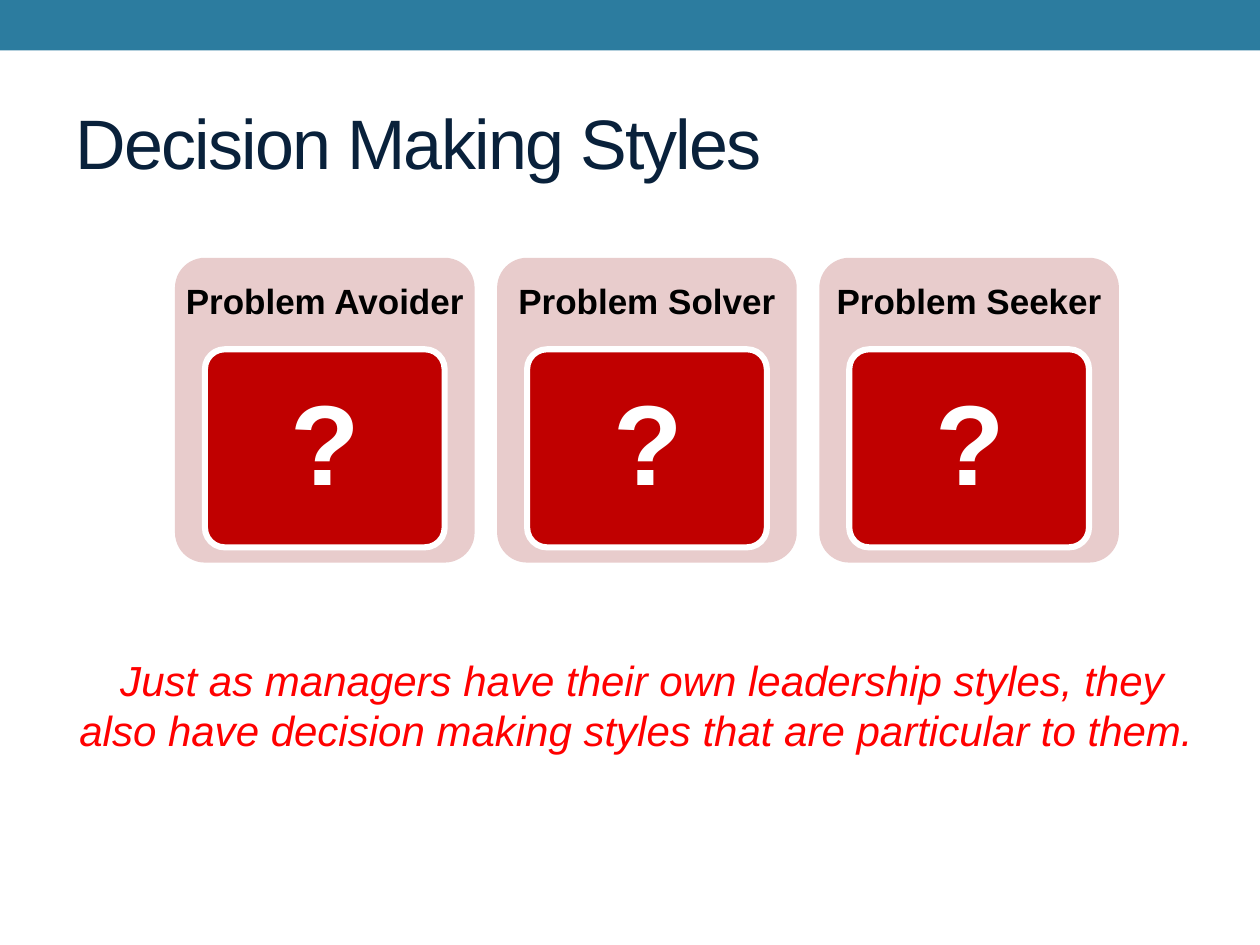
from pptx import Presentation
from pptx.dml.color import RGBColor
from pptx.enum.shapes import MSO_SHAPE as SHAPE
from pptx.enum.text import MSO_ANCHOR as ANCHOR, PP_ALIGN as ALIGN
from pptx.util import Pt

STYLES = ["Problem Avoider", "Problem Solver", "Problem Seeker"]
CARD_LEFT, CARD_TOP, CARD_PITCH = 100, 147.3, 184.1


def color(hex_value):
    return RGBColor.from_string(hex_value)


def add_box(s, kind, x, y, w, h, fill, line=None, line_width=3.5):
    sp = s.shapes.add_shape(kind, Pt(x), Pt(y), Pt(w), Pt(h))
    sp.shadow.inherit = False
    sp.fill.solid()
    sp.fill.fore_color.rgb = color(fill)
    if line:
        sp.line.color.rgb = color(line)
        sp.line.width = Pt(line_width)
    else:
        sp.line.fill.background()
    if kind == SHAPE.ROUNDED_RECTANGLE:
        sp.adjustments[0] = 0.1
    return sp


def add_text(s, text, x, y, w, h, font, hex_color, para=None,
             anchor=ANCHOR.MIDDLE, inset=(7.2, 3.6), wrap=True):
    tf = s.shapes.add_textbox(Pt(x), Pt(y), Pt(w), Pt(h)).text_frame
    tf.word_wrap = wrap
    tf.vertical_anchor = anchor
    tf.margin_left = tf.margin_right = Pt(inset[0])
    tf.margin_top = tf.margin_bottom = Pt(inset[1])
    p = tf.paragraphs[0]
    for name, value in (para or {}).items():
        setattr(p, name, value)
    r = p.add_run()
    r.text = text
    for name, value in {"name": "Arial", **font}.items():
        setattr(r.font, name, value)
    r.font.color.rgb = color(hex_color)
    return r


def add_style_card(s, x, y, heading):
    para = {"alignment": ALIGN.CENTER, "line_spacing": 0.9}
    # Pale card with its heading
    add_box(s, SHAPE.ROUNDED_RECTANGLE, x, y, 171.2, 174.2, "E8CCCC")
    add_text(s, heading, x, y, 171.2, 52.3, {"size": Pt(20), "bold": True},
             "000000", para, inset=(6, 6), wrap=False)
    # Red panel with its question mark
    add_box(s, SHAPE.ROUNDED_RECTANGLE, x + 17.1, y + 52.3, 137, 113.2,
            "C00000", "FFFFFF")
    add_text(s, "?", x + 20.9, y + 55.7, 130.4, 106.6,
             {"size": Pt(65), "bold": True}, "FFFFFF", para, inset=(13, 10))


def main():
    prs = Presentation()
    prs.slide_width, prs.slide_height = Pt(720), Pt(540)
    s = prs.slides.add_slide(prs.slide_layouts[6])

    # Top band and title
    add_box(s, SHAPE.RECTANGLE, 0, 0, 720, 28.8, "2C7C9F")
    r = add_text(s, "Decision Making Styles", 36, 41.8, 648, 77.8,
                 {"size": Pt(40)}, "09213B")
    r.font._element.set("spc", "-100")

    # Decision styles
    for i, heading in enumerate(STYLES):
        add_style_card(s, CARD_LEFT + i * CARD_PITCH, CARD_TOP, heading)

    # Closing statement
    add_text(s, "Just as managers have their own leadership styles, they also "
             "have decision making styles that are particular to them. ",
             36, 370.3, 661.7, 81.4, {"size": Pt(24), "italic": True},
             "FF0000",
             {"alignment": ALIGN.CENTER, "space_before": Pt(4.8)},
             ANCHOR.TOP, inset=(9, 3.6))

    prs.save("out.pptx")


if __name__ == "__main__":
    main()
